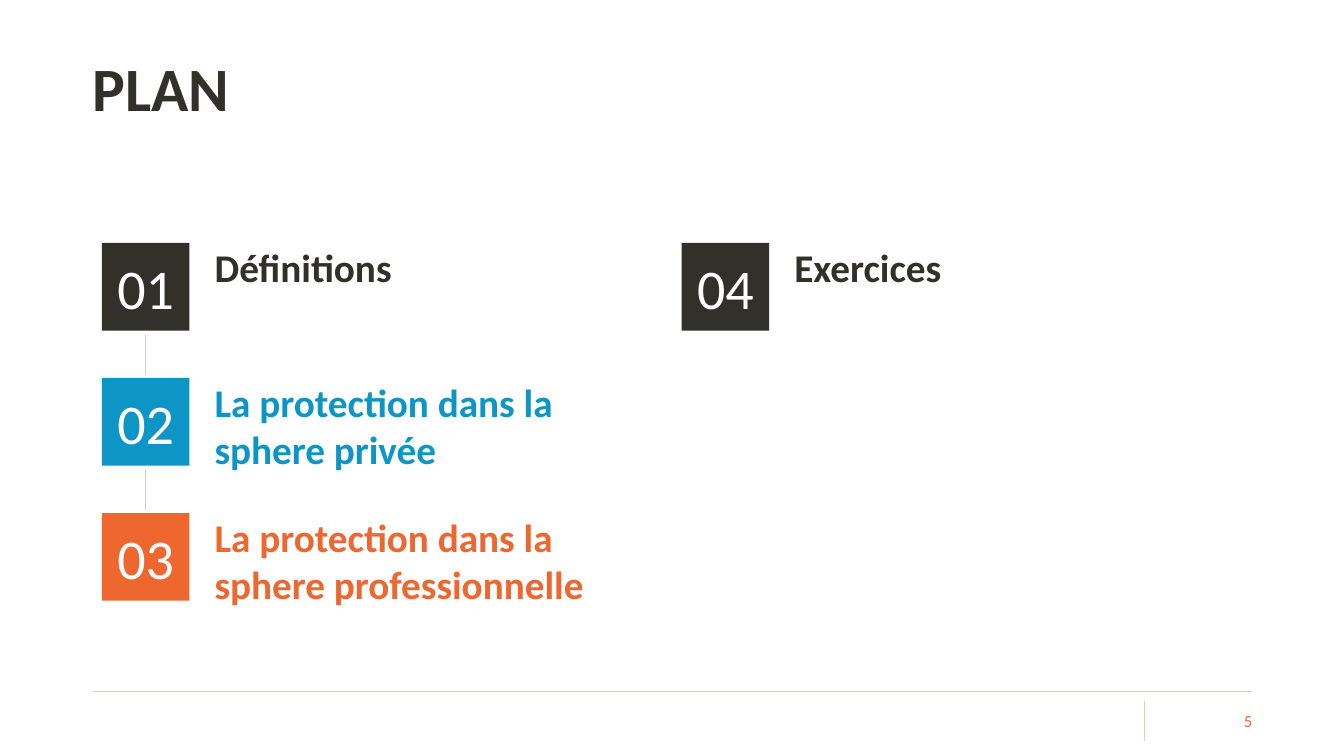
import pptx
import pptx.util
import pptx.dml.color
import pptx.enum.shapes
import pptx.enum.text
import pptx.oxml.ns
import lxml.etree

Inches = pptx.util.Inches
ALIGN = pptx.enum.text.PP_ALIGN
ANCHOR = pptx.enum.text.MSO_ANCHOR

COLORS = {
    "dark": "31302B",
    "blue": "0D96C5",
    "orange": "EE672F",
    "white": "FFFFFF",
    "rule": "CECDC7",
    "peach": "F8C2AC",
    "link": "D0CECE",
}


class PlanSlide:
    font = "Calibri"
    box = 0.87

    def __init__(self, prs):
        self.s = prs.slides.add_slide(prs.slide_layouts[6])

    def color(self, name):
        return pptx.dml.color.RGBColor.from_string(COLORS[name])

    def set_text(self, sp, text, size, color, bold=False, align=ALIGN.LEFT,
                 anchor=ANCHOR.TOP, insets=(0.1, 0.05, 0.1, 0.05), spacing=None):
        tf = sp.text_frame
        tf.word_wrap = True
        tf.vertical_anchor = anchor
        (tf.margin_left, tf.margin_top,
         tf.margin_right, tf.margin_bottom) = map(Inches, insets)
        tf.text = text
        p = tf.paragraphs[0]
        p.alignment = align
        if spacing:
            p.line_spacing = spacing
        r = p.runs[0]
        r.font.name = self.font
        r.font.size = pptx.util.Pt(size)
        r.font.bold = bold
        r.font.color.rgb = self.color(color)

    def text(self, x, y, w, h, text, size, color, **style):
        sp = self.s.shapes.add_textbox(Inches(x), Inches(y), Inches(w), Inches(h))
        self.set_text(sp, text, size, color, **style)
        return sp

    def line(self, x1, y1, x2, y2, color):
        cx = self.s.shapes.add_connector(
            pptx.enum.shapes.MSO_CONNECTOR.STRAIGHT,
            Inches(x1), Inches(y1), Inches(x2), Inches(y2))
        cx.line.color.rgb = self.color(color)
        cx.line.width = pptx.util.Pt(0.5)
        sp_pr = cx.element.find(pptx.oxml.ns.qn("p:spPr"))
        lxml.etree.SubElement(sp_pr, pptx.oxml.ns.qn("a:effectLst"))

    def number(self, x, y, text, color):
        sp = self.s.shapes.add_shape(
            pptx.enum.shapes.MSO_SHAPE.RECTANGLE,
            Inches(x), Inches(y), Inches(self.box), Inches(self.box))
        sp.shadow.inherit = False
        sp.fill.solid()
        sp.fill.fore_color.rgb = self.color(color)
        sp.line.fill.background()
        self.set_text(sp, text, 40, "white", align=ALIGN.CENTER, anchor=ANCHOR.MIDDLE)

    def item(self, x, y, number, label, lines, color):
        sp = self.text(x + 1.02, y, 4.61, 0.47 * lines, label, 28, color,
                       bold=True, insets=(0.1, 0, 0.1, 0))
        sp.text_frame.auto_size = pptx.enum.text.MSO_AUTO_SIZE.SHAPE_TO_FIT_TEXT
        self.number(x, y, number, color)


def main():
    prs = pptx.Presentation()
    prs.slide_width = Inches(13.33)
    prs.slide_height = Inches(7.5)
    slide = PlanSlide(prs)

    slide.line(0.92, 6.86, 12.42, 6.86, "rule")
    slide.line(11.35, 6.95, 11.35, 7.35, "peach")

    left, top, column, row, rows = 1.01, 2.41, 5.75, 1.34, 3
    items = [
        ("Définitions", 1, "dark"),
        ("La protection dans la sphere privée", 2, "blue"),
        ("La protection dans la sphere professionnelle", 2, "orange"),
        ("Exercices", 1, "dark"),
    ]
    for i, (label, lines, color) in enumerate(items):
        x = left + i // rows * column
        y = top + i % rows * row
        slide.item(x, y, f"{i + 1:02d}", label, lines, color)

    for i in range(rows - 1):
        y = top + i * row + 0.91
        slide.line(1.44, y, 1.44, y + 0.4, "link")

    slide.text(0.92, 0.18, 10.47, 1.45, "PLAN", 44, "dark", bold=True,
               anchor=ANCHOR.MIDDLE, insets=(0, 0.05, 0.1, 0.05), spacing=0.9)
    slide.text(11.47, 6.95, 0.95, 0.4, "5", 12, "orange", align=ALIGN.RIGHT,
               anchor=ANCHOR.MIDDLE, insets=(0, 0.05, 0, 0.05))

    prs.save("out.pptx")


if __name__ == "__main__":
    main()
